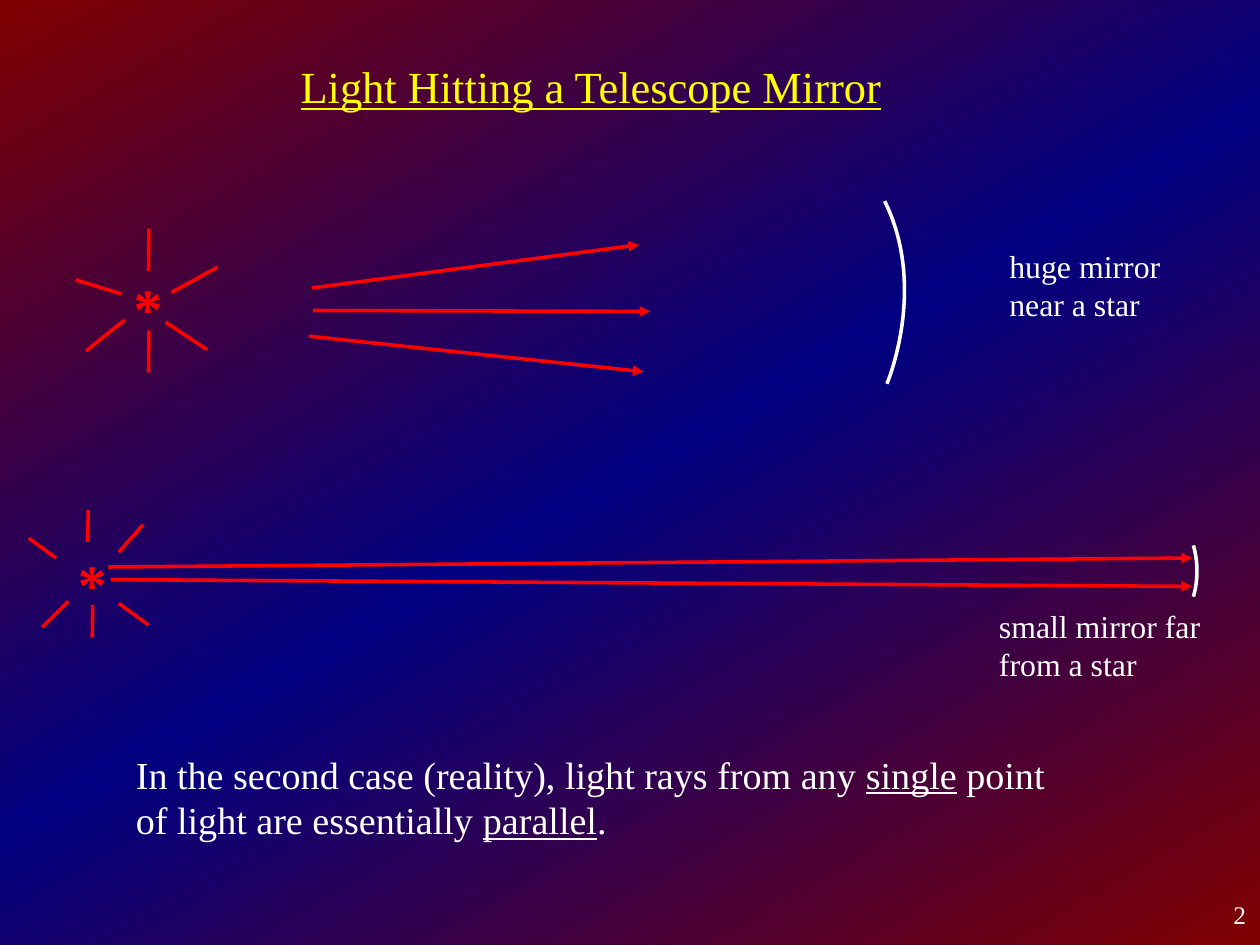
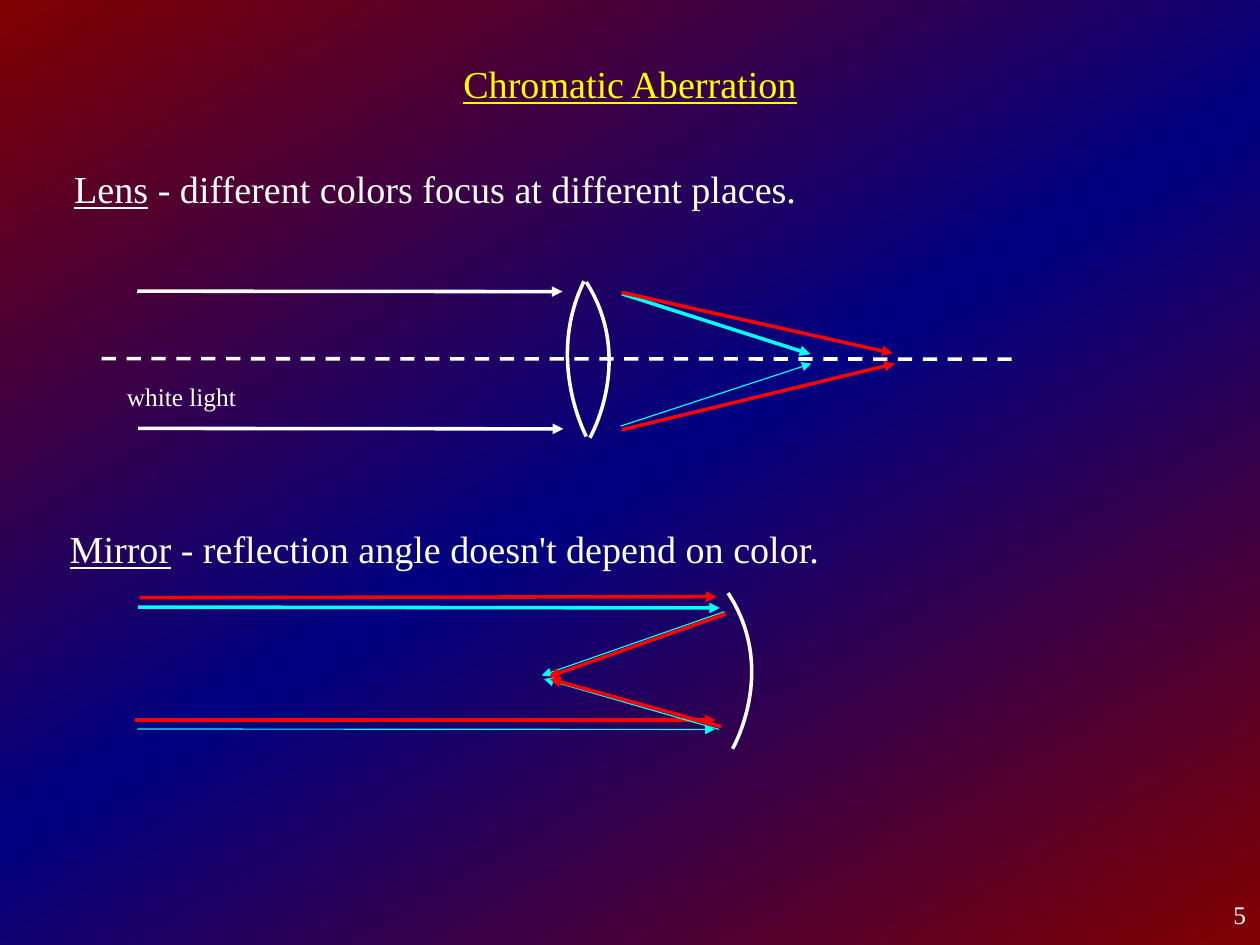
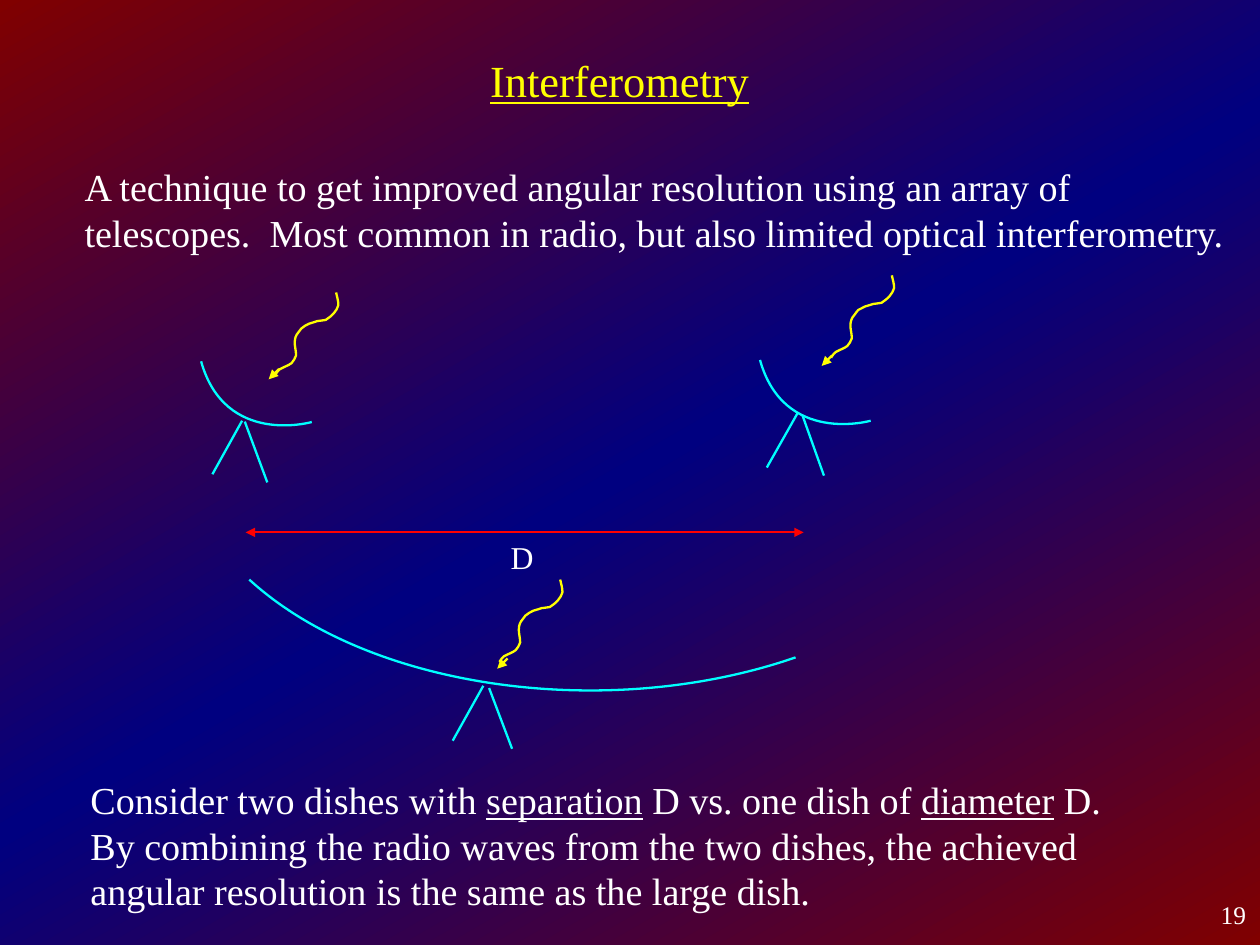
from copy import deepcopy

from lxml.etree import SubElement
from pptx import Presentation
from pptx.dml.color import RGBColor
from pptx.enum.dml import MSO_LINE
from pptx.enum.shapes import MSO_CONNECTOR
from pptx.enum.text import MSO_ANCHOR, PP_ALIGN
from pptx.oxml.ns import qn
from pptx.util import Cm, Pt

# Shared look; all positions are in centimetres
FONT = "Times New Roman"
RED, CYAN, YELLOW, WHITE = "FF0000", "00FFFF", "FFFF00", "FFFFFF"
BACKGROUND_STOPS = [(0, "800000"), (0.5, "000080"), (1, "800000")]
NUMBER_BOX = (21.41, 19.76, 6.28, 1.12)
THICK, MEDIUM, THIN = 2.25, 1.45, 0.75

# Slide 1: telescope mirror. Texts are (paragraphs, box, size); _x_ is underlined
MIRROR_TITLE = ("Light Hitting a Telescope Mirror", (3.35, 1.32, 19.56, 1.12), 28)
MIRROR_TEXTS = [
    (["huge mirror near a star"], (22.43, 5.49, 3.84, 1.57), 20),
    (["small mirror far from a star"], (22.2, 13.49, 5.03, 1.65), 20),
    (["In the second case (reality), light rays from any _single_ point of light "
      "are essentially _parallel_."], (3.02, 16.69, 20.68, 1.91), 24),
]
STAR_BOXES = [(2.97, 6.05, 0.76, 1.52), (1.73, 12.19, 0.76, 1.52)]
STAR_RAYS = [
    # near star
    (3.3, 6.02, 3.31, 5.08), (3.3, 8.28, 3.31, 7.34), (1.68, 6.22, 2.69, 6.53),
    (1.91, 7.8, 2.77, 7.11), (4.83, 5.94, 3.81, 6.5), (4.6, 7.77, 3.68, 7.16),
    # far star
    (1.95, 12.04, 1.96, 11.33), (0.94, 13.94, 1.52, 13.36), (1.24, 12.4, 0.64, 11.96),
    (3.3, 13.89, 2.64, 13.41), (2.64, 12.27, 3.18, 11.66), (2.05, 14.17, 2.06, 13.44),
]
LIGHT_ARROWS = [
    (6.93, 6.4, 14.2, 5.44), (6.86, 7.47, 14.3, 8.26), (6.96, 6.9, 14.45, 6.92),
    (2.41, 12.6, 26.49, 12.4), (2.46, 12.88, 26.49, 13.03),
]
# Curves: start, control points, end
MIRRORS = [
    [(19.66, 4.47), (20.62, 6.4), (19.71, 8.53)],
    [(26.52, 12.12), (26.7, 12.73), (26.52, 13.26)],
]

# Slide 2: chromatic aberration
COLOR_TITLE = ("Chromatic Aberration", (4.83, 1.35, 18.34, 0.94), 24)
COLOR_TEXTS = [
    (["_Lens_ - different colors focus at different places."],
     (1.65, 3.68, 17.17, 1.98), 24),
    (["white light"], (2.82, 8.48, 6.88, 0.71), 16),
    (["_Mirror_ - reflection angle doesn't depend on color."],
     (1.55, 11.68, 19.02, 1.04), 24),
]
OPTICAL_AXIS = (2.26, 7.97, 22.61, 7.98)
COLOR_ARROWS = [
    # through the lens
    ((3.05, 6.47, 12.5, 6.48), WHITE, THICK),
    ((3.07, 9.52, 12.52, 9.53), WHITE, THICK),
    ((13.82, 6.53, 18.01, 7.87), CYAN, THICK),
    ((13.79, 9.47, 18.03, 8.08), CYAN, THIN),
    ((13.82, 6.5, 19.84, 7.85), RED, THICK),
    ((13.82, 9.55, 19.89, 8.08), RED, THICK),
    # to the mirror
    ((3.07, 13.49, 16, 13.51), CYAN, THICK),
    ((3.05, 16.2, 15.88, 16.21), CYAN, THIN),
    ((3.1, 13.28, 15.93, 13.26), RED, THICK),
    ((3, 16, 15.9, 16), RED, THICK),
    # back from the mirror
    ((16.1, 13.59, 12.04, 15.01), CYAN, THIN),
    ((15.98, 16.21, 12.09, 15.09), CYAN, THIN),
    ((16.13, 13.64, 12.19, 15.04), RED, THICK),
    ((16.03, 16.15, 12.22, 15.09), RED, THICK),
]
LENS_AND_MIRROR = [
    [(12.98, 6.25), (12.12, 8), (13.03, 9.7)],
    [(13.03, 6.27), (14.12, 7.98), (13.11, 9.73)],
    [(16.18, 13.18), (17.3, 14.88), (16.28, 16.64)],
]

# Slide 3: interferometry
ARRAY_TITLE = ("Interferometry", (5.49, 1.19, 16.56, 1.12), 28)
ARRAY_TEXTS = [
    (["A technique to get improved angular resolution using an array of telescopes.  "
      "Most common in radio, but also limited optical interferometry."],
     (1.88, 3.63, 25.76, 1.96), 24),
    (["D"], (11.35, 11.94, 0.89, 0.79), 20),
    (["Consider two dishes with _separation_ D vs. one dish of _diameter_ D.",
      "By combining the radio waves from the two dishes, the achieved angular "
      "resolution is the same as the large dish."], (2.01, 17.25, 23.09, 2.84), 24),
]
SEPARATION = (5.46, 11.83, 17.86, 11.83)
LARGE_DISH = [(5.54, 12.88), (8.2, 15.32), (13.51, 16.05), (17.68, 14.61)]
SMALL_DISH = [(0, 0), (0.53, 1.9), (2.46, 1.35)]
SMALL_DISH_CORNERS = [(4.47, 8.03), (16.89, 8)]
DISH_LEGS = [
    (5.38, 9.35, 4.72, 10.54), (5.44, 9.37, 5.94, 10.72),
    (17.73, 9.17, 17.04, 10.39), (17.83, 9.22, 18.31, 10.57),
    (10.74, 15.24, 10.06, 16.46), (10.87, 15.29, 11.38, 16.64),
]
RADIO_WAVE = [
    (0, 1.83), (0.03, 1.78), (0.08, 1.7), (0.15, 1.68),
    (0.2, 1.65), (0.28, 1.63), (0.36, 1.57), (0.41, 1.52), (0.43, 1.47), (0.46, 1.4),
    (0.46, 1.3), (0.43, 1.19), (0.43, 1.12), (0.43, 1.02), (0.46, 0.94), (0.51, 0.89),
    (0.56, 0.84), (0.58, 0.76), (0.66, 0.74), (0.71, 0.69), (0.79, 0.69), (0.86, 0.66),
    (0.97, 0.61), (1.04, 0.64), (1.12, 0.61), (1.19, 0.56), (1.24, 0.53), (1.3, 0.46),
    (1.35, 0.41), (1.37, 0.36), (1.4, 0.28), (1.4, 0.18), (1.37, 0.1), (1.35, 0),
]
# Wave corner and arrow tip
RADIO_WAVES = [((6.12, 6.5), (5.97, 8.43)), ((18.47, 6.12), (18.26, 8.13)),
               ((11.1, 12.88), (11.05, 14.86))]
WAVE_TIP_LENGTH = 0.23


def color(value):
    return RGBColor.from_string(value)


def moved(points, offset):
    return [(x + offset[0], y + offset[1]) for x, y in points]


def set_background(master):
    fill = master.background.fill
    fill.gradient()
    fill.gradient_angle = 300
    stop_list = master.element.find(".//" + qn("a:gsLst"))
    stop_list.insert(1, deepcopy(stop_list[0]))
    for stop, (position, value) in zip(fill.gradient_stops, BACKGROUND_STOPS):
        stop.position = position
        stop.color.rgb = color(value)


def add_text(slide, paragraphs, box, size, value=WHITE, align=PP_ALIGN.LEFT,
             anchor=MSO_ANCHOR.TOP, bold=False):
    frame = slide.shapes.add_textbox(*map(Cm, box)).text_frame
    frame.word_wrap = True
    frame.vertical_anchor = anchor
    frame.margin_left = frame.margin_right = frame.margin_top = frame.margin_bottom = 0
    for index, text in enumerate(paragraphs):
        paragraph = frame.add_paragraph() if index else frame.paragraphs[0]
        paragraph.alignment = align
        for part_index, part in enumerate(text.split("_")):
            if not part:
                continue
            run = paragraph.add_run()
            run.text = part
            run.font.name, run.font.size, run.font.bold = FONT, Pt(size), bold
            run.font.color.rgb = color(value)
            run.font.underline = part_index % 2 == 1


def add_line(slide, ends, value, width, arrows=(), dash=None):
    connector = slide.shapes.add_connector(MSO_CONNECTOR.STRAIGHT, *map(Cm, ends))
    connector.line.color.rgb = color(value)
    connector.line.width = Pt(width)
    if dash:
        connector.line.dash_style = dash
    properties = connector.element.spPr
    for arrow in arrows:
        SubElement(properties.find(qn("a:ln")), qn("a:" + arrow), type="triangle")
    SubElement(properties, qn("a:effectLst"))


def add_arrow(slide, ends, value, width):
    add_line(slide, ends, value, width, arrows=["tailEnd"])


def add_curve(slide, points, value, width):
    if len(points) == 3:
        points = points + points[-1:]
    start, *others = [(Cm(x), Cm(y)) for x, y in points]
    builder = slide.shapes.build_freeform(*start)
    builder.add_line_segments(others, close=False)
    shape = builder.convert_to_shape()
    # Turn every three segments into one cubic curve
    outline = shape.element.find(".//" + qn("a:path"))
    segments = outline.findall(qn("a:lnTo"))
    for first in range(0, len(segments), 3):
        curve = SubElement(outline, qn("a:cubicBezTo"))
        for segment in segments[first:first + 3]:
            curve.append(segment[0])
            outline.remove(segment)
    shape.shadow.inherit = False
    shape.fill.background()
    shape.line.color.rgb = color(value)
    shape.line.width = Pt(width)


def add_slide(presentation, title, number, texts):
    slide = presentation.slides.add_slide(presentation.slide_layouts[6])
    text, box, size = title
    add_text(slide, [f"_{text}_"], box, size, YELLOW, PP_ALIGN.CENTER)
    for paragraphs, box, size in texts:
        add_text(slide, paragraphs, box, size)
    add_text(slide, [number], NUMBER_BOX, 16, align=PP_ALIGN.RIGHT,
             anchor=MSO_ANCHOR.MIDDLE)
    return slide


def build_mirror_slide(presentation):
    slide = add_slide(presentation, MIRROR_TITLE, "2", MIRROR_TEXTS)
    for box in STAR_BOXES:
        add_text(slide, ["*"], box, 36, RED, bold=True)
    for ends in STAR_RAYS:
        add_line(slide, ends, RED, THICK)
    for ends in LIGHT_ARROWS:
        add_arrow(slide, ends, RED, THICK)
    for points in MIRRORS:
        add_curve(slide, points, WHITE, THICK)


def build_color_slide(presentation):
    slide = add_slide(presentation, COLOR_TITLE, "5", COLOR_TEXTS)
    add_line(slide, OPTICAL_AXIS, WHITE, THICK, dash=MSO_LINE.DASH)
    for ends, value, width in COLOR_ARROWS:
        add_arrow(slide, ends, value, width)
    for points in LENS_AND_MIRROR:
        add_curve(slide, points, WHITE, THICK)


def build_array_slide(presentation):
    slide = add_slide(presentation, ARRAY_TITLE, "19", ARRAY_TEXTS)
    # Dishes and their legs
    dishes = [moved(SMALL_DISH, corner) for corner in SMALL_DISH_CORNERS]
    for points in dishes + [LARGE_DISH]:
        add_curve(slide, points, CYAN, MEDIUM)
    for ends in DISH_LEGS:
        add_line(slide, ends, CYAN, MEDIUM)
    # Separation and incoming waves
    add_line(slide, SEPARATION, RED, MEDIUM, arrows=["headEnd", "tailEnd"])
    for corner, (x, y) in RADIO_WAVES:
        add_curve(slide, moved(RADIO_WAVE, corner), YELLOW, MEDIUM)
        add_arrow(slide, (x + WAVE_TIP_LENGTH, y - WAVE_TIP_LENGTH, x, y),
                  YELLOW, MEDIUM)


def main():
    presentation = Presentation()
    presentation.slide_width, presentation.slide_height = Cm(28), Cm(21)
    set_background(presentation.slide_master)
    build_mirror_slide(presentation)
    build_color_slide(presentation)
    build_array_slide(presentation)
    presentation.save("out.pptx")


if __name__ == "__main__":
    main()
